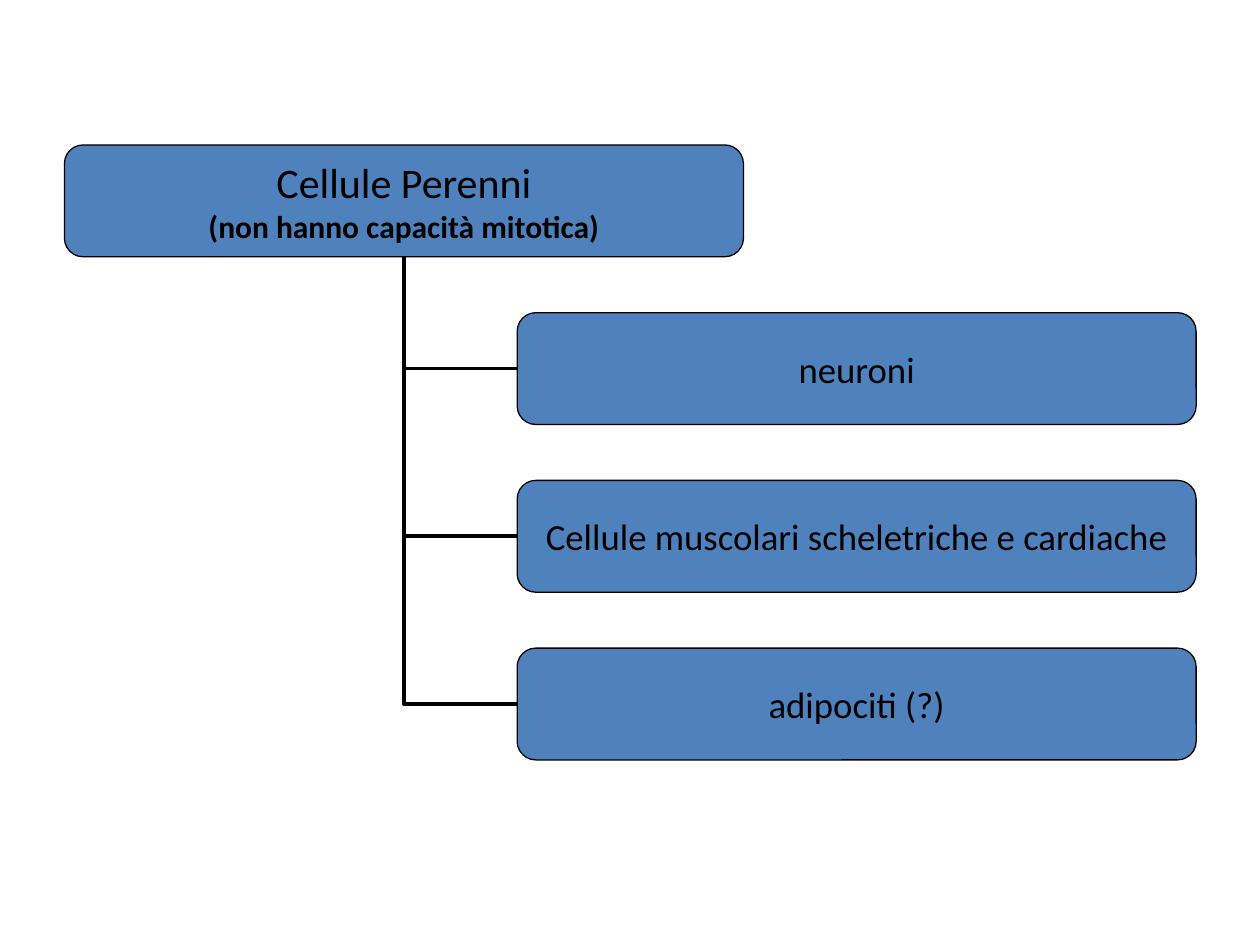
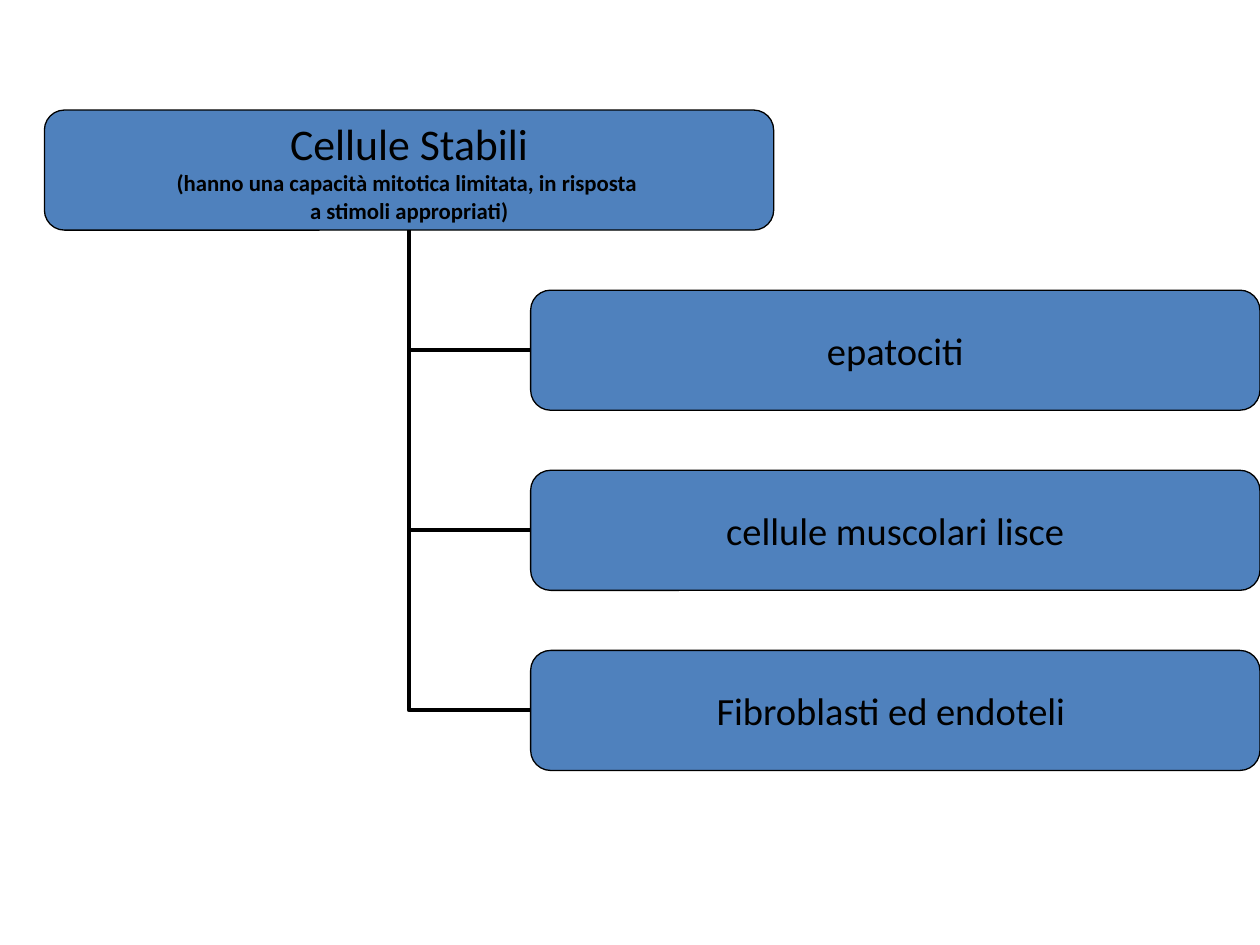
from pptx import Presentation
from pptx.dml.color import RGBColor
from pptx.enum.shapes import MSO_CONNECTOR as CXN, MSO_SHAPE as SHAPE
from pptx.enum.text import MSO_ANCHOR as ANCHOR, PP_ALIGN as ALIGN
from pptx.oxml.ns import qn
from pptx.util import Pt
from lxml.etree import SubElement

COLORS = {"box": "4F81BD", "line": "000000", "text": "000000"}
FONT = "Calibri"
BOX_LINE, BRANCH_LINE = 0.75, 2.25
BOTTOM, LEFT = 2, 1

CHARTS = [
    {
        "area": (36.86, 82.86, 646.67, 351.4),
        "sizes": {"title": 24, "note": 18, "item": 21},
        "title": "Cellule Perenni",
        "notes": ["(non hanno capacità mitotica)"],
        "items": ["neuroni", "Cellule muscolari scheletriche e cardiache", "adipociti (?)"],
    },
    {
        "area": (25.4, 62.86, 694.6, 377.4),
        "sizes": {"title": 25, "note": 13, "item": 22},
        "title": "Cellule Stabili",
        "notes": ["(hanno una capacità mitotica limitata, in risposta ", "a stimoli appropriati)"],
        "items": ["epatociti", "cellule muscolari lisce", "Fibroblasti ed endoteli "],
    },
]


def rgb(name):
    return RGBColor.from_string(COLORS[name])


def set_line(line, width):
    line.color.rgb = rgb("line")
    line.width = Pt(width)


def add_box(slide, box, lines):
    """Add a rounded box; lines holds (text, size, bold) for each paragraph."""
    s = slide.shapes.add_shape(SHAPE.ROUNDED_RECTANGLE, *(Pt(v) for v in box))
    s.shadow.inherit = False
    s.adjustments[0] = 0.167
    s.fill.solid()
    s.fill.fore_color.rgb = rgb("box")
    set_line(s.line, BOX_LINE)

    tf = s.text_frame
    frame = {"word_wrap": False, "vertical_anchor": ANCHOR.MIDDLE, "margin_left": 0,
             "margin_right": 0, "margin_top": 0, "margin_bottom": 0}
    for key, value in frame.items():
        setattr(tf, key, value)

    for i, (text, size, bold) in enumerate(lines):
        p = tf.paragraphs[0] if i == 0 else tf.add_paragraph()
        p.alignment = ALIGN.CENTER
        r = p.add_run()
        r.text = text
        for key, value in {"name": FONT, "size": Pt(size), "bold": bold}.items():
            setattr(r.font, key, value)
        r.font.color.rgb = rgb("text")
    return s


def add_branch(slide, parent, child):
    """Join the child's left side to the parent's bottom with one bend."""
    c = slide.shapes.add_connector(CXN.ELBOW, 0, 0, 0, 0)
    c.begin_connect(child, LEFT)
    c.end_connect(parent, BOTTOM)
    set_line(c.line, BRANCH_LINE)
    sp_pr = c._element.spPr
    sp_pr.find(qn("a:prstGeom")).set("prst", "bentConnector2")
    SubElement(sp_pr, qn("a:effectLst"))


def add_hierarchy(slide, area, title, notes, items, sizes):
    """Fill the area with a heading box and items indented by 2/3 of a box."""
    left, top, width, height = area
    box_w = width * 3 / 5
    box_h = height / (1 + 1.5 * len(items))
    indent, pitch = width - box_w, 1.5 * box_h

    heading = [(title, sizes["title"], False)]
    heading += [(note, sizes["note"], True) for note in notes]
    parent = add_box(slide, (left, top, box_w, box_h), heading)
    for row, item in enumerate(items, 1):
        box = (left + indent, top + row * pitch, box_w, box_h)
        child = add_box(slide, box, [(item, sizes["item"], False)])
        add_branch(slide, parent, child)


def main():
    prs = Presentation()
    prs.slide_width, prs.slide_height = Pt(720), Pt(540)
    for chart in CHARTS:
        slide = prs.slides.add_slide(prs.slide_layouts[6])
        add_hierarchy(slide, **chart)
    prs.save("out.pptx")


if __name__ == "__main__":
    main()
